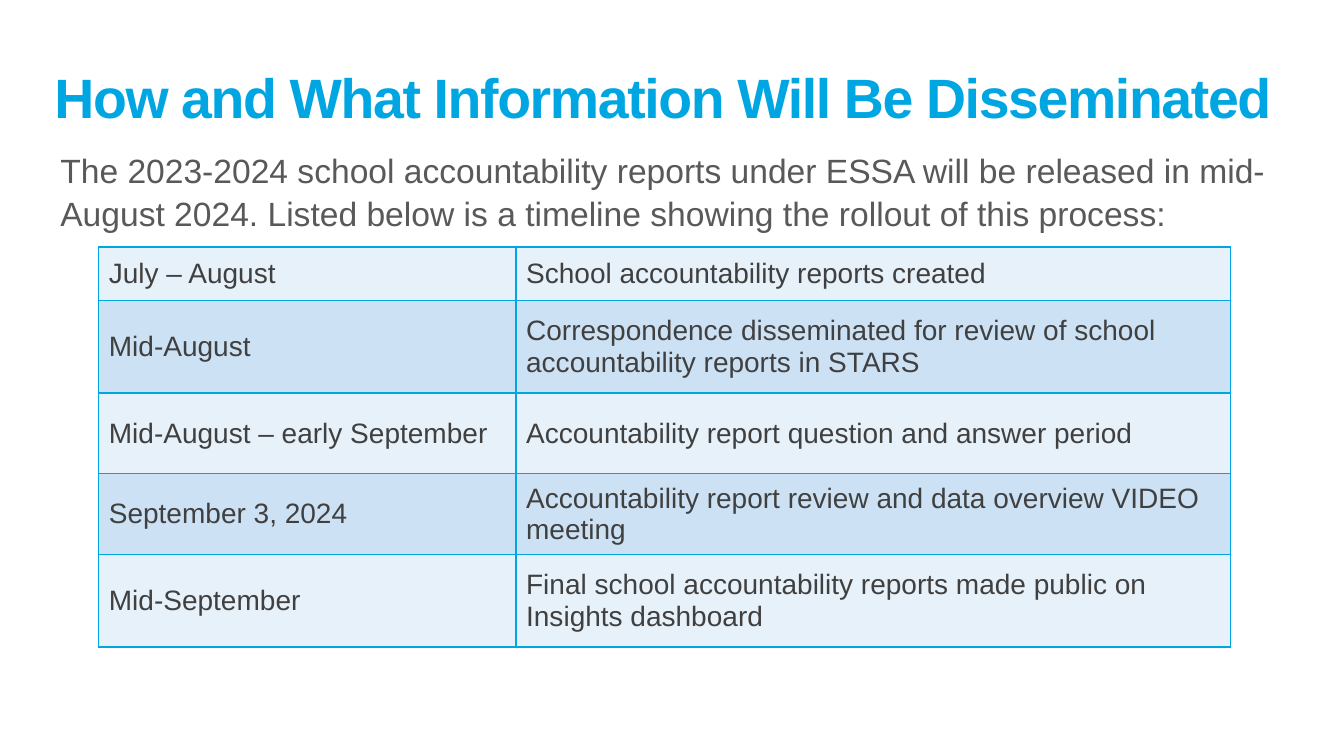
from lxml import etree
from pptx import Presentation
from pptx.dml.color import RGBColor
from pptx.enum.text import MSO_ANCHOR, MSO_AUTO_SIZE, PP_ALIGN
from pptx.oxml.ns import qn
from pptx.util import Inches, Pt

MIDDLE, BOTTOM = MSO_ANCHOR.MIDDLE, MSO_ANCHOR.BOTTOM
NO_AUTOFIT = MSO_AUTO_SIZE.NONE
LEFT = PP_ALIGN.LEFT
BLUE = RGBColor(0x00, 0xA6, 0xE1)
BODY_GREY = RGBColor(0x59, 0x59, 0x59)
CELL_GREY = RGBColor(0x40, 0x40, 0x40)
BANDS = (RGBColor(0xE7, 0xF1, 0xF9), RGBColor(0xCC, 0xE1, 0xF4))
FONT = "Arial"
UNIT = Inches(0.1)
GRID_COLUMNS, GRID_ROWS = 133.33, 75
TITLE_ONLY = 5

TITLE = "How and What Information Will Be Disseminated"
INTRO = ("The 2023-2024 school accountability reports under ESSA will be released in "
         "mid-August 2024. Listed below is a timeline showing the rollout of this process:")
COLUMN_WIDTHS = (41.4, 70.9)
TIMELINE = (
    (5.3, "July – August", "School accountability reports created"),
    (9.2, "Mid-August",
     "Correspondence disseminated for review of school accountability reports in STARS"),
    (8, "Mid-August – early September", "Accountability report question and answer period"),
    (8, "September 3, 2024", "Accountability report review and data overview VIDEO meeting"),
    (9.2, "Mid-September",
     "Final school accountability reports made public on Insights dashboard"),
)


def grid(*units):
    """Turn grid columns and rows into lengths."""
    return [round(unit * UNIT) for unit in units]


class SlideBuilder:
    """Holds the text style and the current slide."""

    def __init__(self, deck):
        """Add a title-only slide to the deck."""
        self.slide = deck.slides.add_slide(deck.slide_layouts[TITLE_ONLY])

    def add_text(self, frame, text, size, color, bold=False):
        """Add one styled run and return its paragraph and run."""
        para = frame.paragraphs[0]
        para.alignment = LEFT
        span = para.add_run()
        span.text = text
        span.font.name = FONT
        span.font.size = Pt(size)
        span.font.bold = bold
        span.font.color.rgb = color
        return para, span

    def title(self, text, place):
        """Place and fill the title."""
        box = self.slide.shapes.title
        box.left, box.top, box.width, box.height = grid(*place)
        frame = box.text_frame
        frame.word_wrap = True
        frame.auto_size = NO_AUTOFIT
        frame.vertical_anchor = BOTTOM
        _, span = self.add_text(frame, text, 39.6, BLUE, bold=True)
        span.font._element.set("spc", "-100")

    def body(self, text, place):
        """Add a wrapped paragraph of body text."""
        frame = self.slide.shapes.add_textbox(*grid(*place)).text_frame
        frame.word_wrap = True
        para, _ = self.add_text(frame, text, 24, BODY_GREY)
        para.line_spacing = 1.05

    def border(self, cell):
        """Draw a thin blue line on all four sides of a cell."""
        properties = cell._tc.get_or_add_tcPr()
        for side in ("lnL", "lnR", "lnT", "lnB"):
            line = etree.SubElement(properties, qn(f"a:{side}"), w=str(Pt(1)))
            fill = etree.SubElement(line, qn("a:solidFill"))
            etree.SubElement(fill, qn("a:srgbClr"), val=str(BLUE))

    def table(self, rows, widths, left, top):
        """Add a banded table whose rows each start with their height."""
        place = grid(left, top, sum(widths), sum(row[0] for row in rows))
        table = self.slide.shapes.add_table(len(rows), len(widths), *place).table
        table.first_row = False
        for column, width in zip(table.columns, grid(*widths)):
            column.width = width
        for index, (height, *texts) in enumerate(rows):
            table.rows[index].height = grid(height)[0]
            for cell, text in zip(table.rows[index].cells, texts):
                self.border(cell)
                cell.fill.solid()
                cell.fill.fore_color.rgb = BANDS[index % 2]
                cell.vertical_anchor = MIDDLE
                self.add_text(cell.text_frame, text, 20, CELL_GREY)


def main():
    """Build and save the timeline slide."""
    deck = Presentation()
    deck.slide_width, deck.slide_height = grid(GRID_COLUMNS, GRID_ROWS)
    page = SlideBuilder(deck)
    page.title(TITLE, (4.4, 2.1, 127.7, 11.3))
    page.body(INTRO, (5, 14.2, 121.9, 9.5))
    page.table(TIMELINE, COLUMN_WIDTHS, 9.8, 24.5)
    deck.save("out.pptx")


if __name__ == "__main__":
    main()
